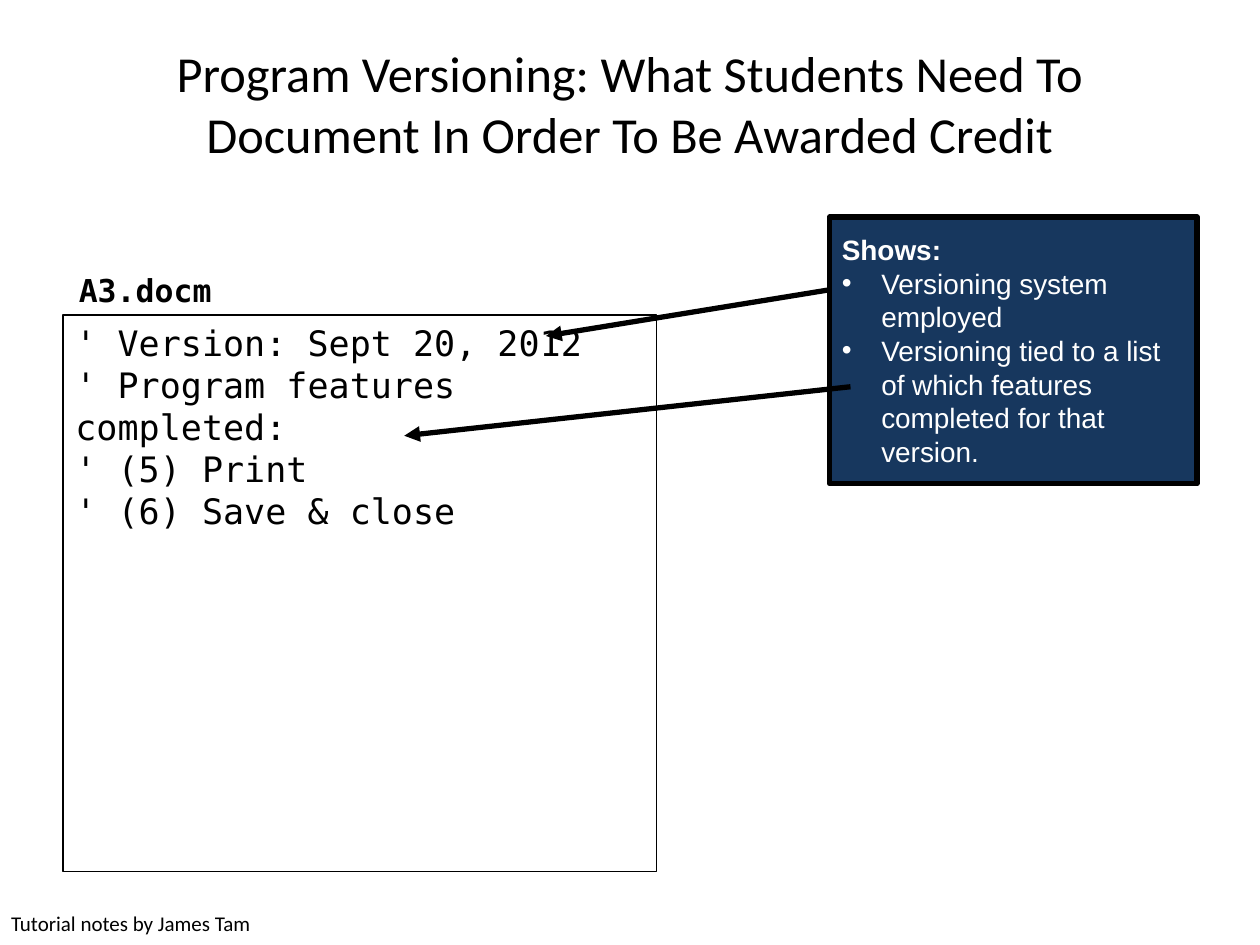
from lxml import etree
from pptx import Presentation
from pptx import util as u
from pptx.dml.color import RGBColor
from pptx.enum import shapes, text
from pptx.oxml.ns import qn

Pt = u.Pt
BLACK = RGBColor(0x00, 0x00, 0x00)
WHITE = RGBColor(0xFF, 0xFF, 0xFF)
NAVY = RGBColor(0x17, 0x37, 0x5E)
MONO = "DejaVu Sans Mono"
LEFT, CENTER = text.PP_ALIGN.LEFT, text.PP_ALIGN.CENTER
TOP, MIDDLE = text.MSO_ANCHOR.TOP, text.MSO_ANCHOR.MIDDLE
INDENT = 22.5

# Boxes: left, top, width, height in points
FOOTER = ((-0.75, 517, 246, 21.75), ["Tutorial notes by James Tam"])
TITLE = ((36, 21.6, 648, 74.4), [
    "Program Versioning: What Students Need To Document In Order To Be Awarded Credit"])
LISTING = ((36, 180, 339, 318), [
    "' Version: Sept 20, 2012",
    "' Program features completed:",
    "' (5) Print",
    "' (6) Save & close"])
FILE_NAME = ((45, 151.2, 90, 29), ["A3.docm"])
CALLOUT = ((474, 124, 210, 152.5), [
    "Shows:",
    "Versioning system employed",
    "Versioning tied to a list of which features completed for that version."])
ARROWS = [((474, 165.6), (312, 192)), ((486, 221), (231, 249))]


def write(sp, lines, font, align=LEFT, anchor=TOP):
    tf = sp.text_frame
    tf.word_wrap, tf.vertical_anchor = True, anchor
    for i, line in enumerate(lines):
        p = tf.paragraphs[0] if i == 0 else tf.add_paragraph()
        p.alignment = align
        r = p.add_run()
        r.text = line
        r.font.color.rgb = font.get("color", BLACK)
        for name in ("name", "size", "bold"):
            setattr(r.font, name, font.get(name))
    return tf


def add_text(s, item, font, **layout):
    box, lines = item
    return write(s.shapes.add_textbox(*map(Pt, box)), lines, font, **layout)


def add_box(s, item, font, line_width, fill=None, **layout):
    box, lines = item
    sp = s.shapes.add_shape(shapes.MSO_SHAPE.RECTANGLE, *map(Pt, box))
    sp.shadow.inherit = False
    if fill is None:
        sp.fill.background()
    else:
        sp.fill.solid()
        sp.fill.fore_color.rgb = fill
    sp.line.color.rgb, sp.line.width = BLACK, Pt(line_width)
    return write(sp, lines, font, **layout)


def add_bullet(p):
    pPr = p._p.get_or_add_pPr()
    pPr.set("marL", str(Pt(INDENT)))
    pPr.set("indent", str(-Pt(INDENT)))
    etree.SubElement(pPr, qn("a:buFont")).set("typeface", "Arial")
    etree.SubElement(pPr, qn("a:buChar")).set("char", "•")


def add_arrow(s, start, end):
    c = s.shapes.add_connector(shapes.MSO_CONNECTOR.STRAIGHT, *map(Pt, start + end))
    c.line.color.rgb, c.line.width = BLACK, Pt(3)
    etree.SubElement(c.line._get_or_add_ln(), qn("a:tailEnd")).set("type", "triangle")
    etree.SubElement(c._element.spPr, qn("a:effectLst"))


def main():
    prs = Presentation()
    prs.slide_width, prs.slide_height = Pt(720), Pt(540)
    s = prs.slides.add_slide(prs.slide_layouts[6])

    add_text(s, FOOTER, {"name": "Calibri", "size": Pt(12)})
    add_text(s, TITLE, {"name": "Calibri", "size": Pt(28.8)}, align=CENTER, anchor=MIDDLE)
    add_box(s, LISTING, {"name": MONO, "size": Pt(20)}, 0.75)
    label = add_text(s, FILE_NAME, {"name": MONO, "size": Pt(18), "bold": True})
    label.margin_left = 0

    callout = add_box(s, CALLOUT, {"name": "Arial", "size": Pt(16), "color": WHITE},
                      3, fill=NAVY, anchor=MIDDLE)
    heading, *points = callout.paragraphs
    heading.runs[0].font.bold = True
    for p in points:
        add_bullet(p)

    for start, end in ARROWS:
        add_arrow(s, start, end)
    prs.save("out.pptx")


if __name__ == "__main__":
    main()
